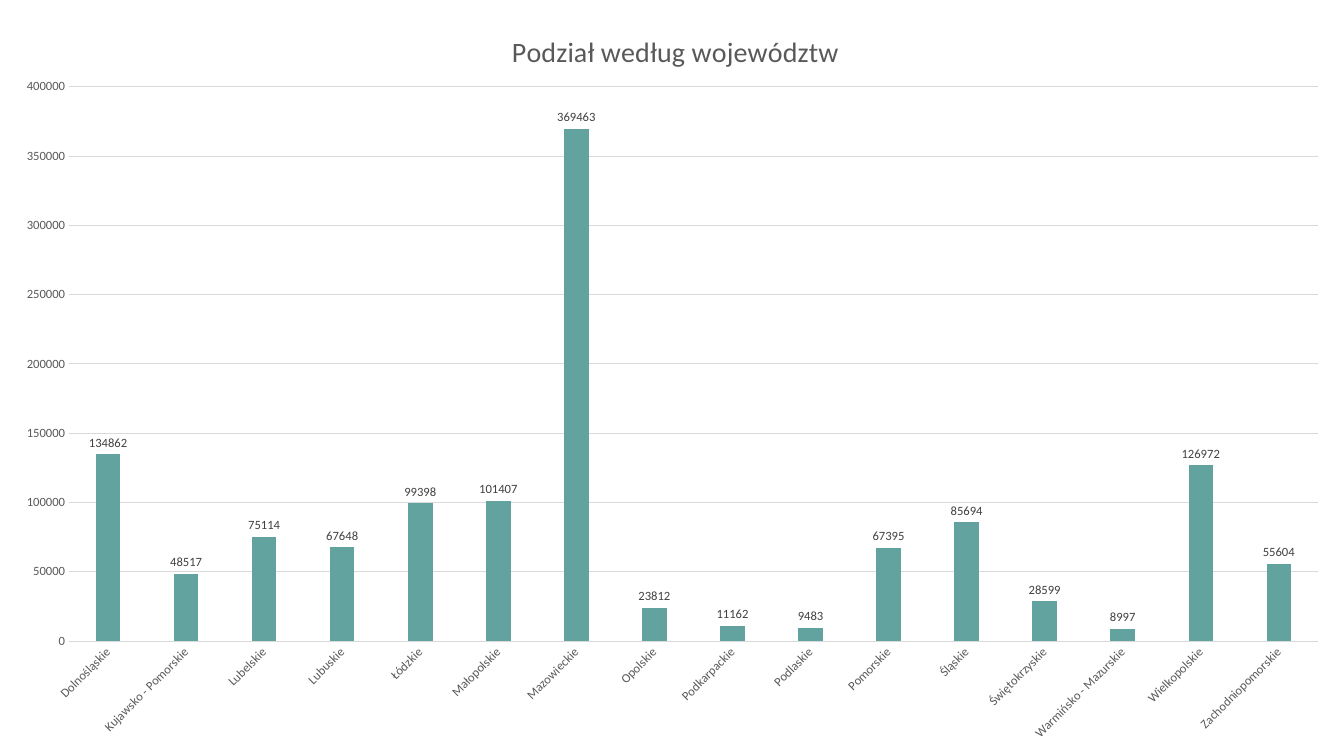
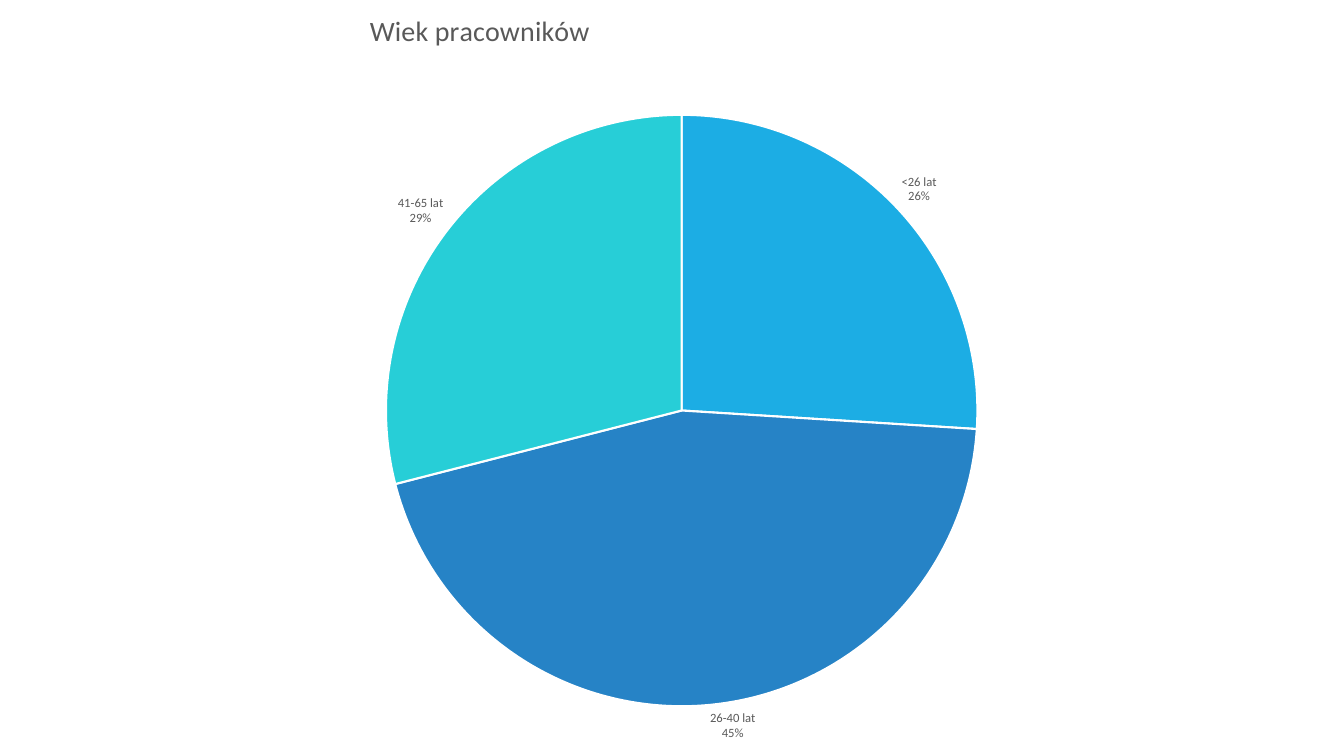
import lxml.etree
import pptx
import pptx.chart.data
import pptx.dml.color
import pptx.enum.chart
import pptx.oxml.ns
import pptx.util

Pt = pptx.util.Pt
RGBColor = pptx.dml.color.RGBColor
qn = pptx.oxml.ns.qn
ChartType = pptx.enum.chart.XL_CHART_TYPE

PAGE_WIDTH, PAGE_HEIGHT = 960, 540
FONT = "Calibri"
WHITE = RGBColor(0xFF, 0xFF, 0xFF)
BLACK = RGBColor(0x00, 0x00, 0x00)
GREY = RGBColor(0x59, 0x59, 0x59)
DARK_GREY = RGBColor(0x40, 0x40, 0x40)
LIGHT_GREY = RGBColor(0xD9, 0xD9, 0xD9)
TEAL = RGBColor(0x62, 0xA3, 0x9F)
AGE_COLOURS = (
    RGBColor(0x1C, 0xAD, 0xE4),
    RGBColor(0x26, 0x83, 0xC6),
    RGBColor(0x27, 0xCE, 0xD7),
    RGBColor(0x42, 0xBA, 0x97),
)

BASE_TEXT = {"name": FONT, "size": Pt(10)}
TITLE_TEXT = {"name": FONT, "size": Pt(20), "bold": False}
SMALL_TEXT = {"name": FONT, "size": Pt(9), "bold": False}

# Title places are (left, top), plot places (left, top, width, height), in points.
REGIONS = {
    "title": "Podział według województw",
    "title_place": (362, 19),
    "plot_place": (49.3, 62, 892, 396),
    "values": {
        "Dolnośląskie": 134862,
        "Kujawsko - Pomorskie": 48517,
        "Lubelskie": 75114,
        "Lubuskie": 67648,
        "Łódzkie": 99398,
        "Małopolskie": 101407,
        "Mazowieckie": 369463,
        "Opolskie": 23812,
        "Podkarpackie": 11162,
        "Podlaskie": 9483,
        "Pomorskie": 67395,
        "Śląskie": 85694,
        "Świętokrzyskie": 28599,
        "Warmińsko - Mazurskie": 8997,
        "Wielkopolskie": 126972,
        "Zachodniopomorskie": 55604,
    },
}
AGES = {
    "title": "Wiek pracowników",
    "title_place": (260.5, 4),
    "plot_place": (275.7, 82, 422.5, 422.5),
    "values": {"<26 lat": 26, "26-40 lat": 45, "41-65 lat": 29, ">65 lat": 0},
}


def set_values(target, values):
    for name, value in values.items():
        setattr(target, name, value)


def style_font(font, values, colour):
    set_values(font, values)
    font.color.rgb = colour


def style_line(line, colour, width):
    line.color.rgb = colour
    line.width = Pt(width)


def place_part(part, position, place, target=None):
    """Give a chart part a fixed place in points, as a layout child at the given position."""
    for old in part.findall(qn("c:layout")):
        part.remove(old)
    layout = lxml.etree.Element(qn("c:layout"))
    manual = lxml.etree.SubElement(layout, qn("c:manualLayout"))
    settings = [("layoutTarget", target)] if target else []
    settings += [("xMode", "edge"), ("yMode", "edge")]
    page_size = (PAGE_WIDTH, PAGE_HEIGHT) * 2
    settings += [(name, str(round(length / whole, 4)))
                 for name, length, whole in zip("xywh", place, page_size)]
    for name, value in settings:
        lxml.etree.SubElement(manual, qn("c:" + name)).set("val", value)
    part.insert(position, layout)


def add_chart_page(deck, chart_type, content):
    """Add a slide filled by one titled chart and return the chart."""
    page = deck.slides.add_slide(deck.slide_layouts[6])
    data = pptx.chart.data.CategoryChartData()
    data.categories = list(content["values"])
    data.add_series("Series 1", list(content["values"].values()))
    chart = page.shapes.add_chart(
        chart_type, 0, 0, Pt(PAGE_WIDTH), Pt(PAGE_HEIGHT), data).chart
    style_font(chart.font, BASE_TEXT, BLACK)
    chart.has_legend = False
    chart.has_title = True
    title = chart.chart_title
    title.text_frame.text = content["title"]
    style_font(title.text_frame.paragraphs[0].runs[0].font, TITLE_TEXT, GREY)
    place_part(title._element, 1, content["title_place"])
    plot_area = chart._chartSpace.find(".//" + qn("c:plotArea"))
    place_part(plot_area, 0, content["plot_place"], "inner")
    return chart


def add_labels(plot, colour, values):
    plot.has_data_labels = True
    labels = plot.data_labels
    style_font(labels.font, SMALL_TEXT, colour)
    labels.position = pptx.enum.chart.XL_LABEL_POSITION.OUTSIDE_END
    set_values(labels, values)
    return labels


def style_axes(chart):
    no_marks = pptx.enum.chart.XL_TICK_MARK.NONE
    for axis in (chart.category_axis, chart.value_axis):
        set_values(axis, {"major_tick_mark": no_marks, "minor_tick_mark": no_marks})
        style_font(axis.tick_labels.font, SMALL_TEXT, GREY)
    style_line(chart.category_axis.format.line, LIGHT_GREY, 0.75)
    label_body = chart.category_axis._element.find(".//" + qn("a:bodyPr"))
    label_body.set("rot", str(-45 * 60000))
    label_body.set("vert", "horz")
    value_axis = chart.value_axis
    set_values(value_axis, {"minimum_scale": 0, "maximum_scale": 400000,
                            "major_unit": 50000, "has_major_gridlines": True})
    value_axis.format.line.fill.background()
    style_line(value_axis.major_gridlines.format.line, LIGHT_GREY, 0.75)


def add_region_page(deck):
    chart = add_chart_page(deck, ChartType.COLUMN_CLUSTERED, REGIONS)
    style_axes(chart)
    plot = chart.plots[0]
    set_values(plot, {"gap_width": 219, "overlap": -27, "vary_by_categories": False})
    fill = plot.series[0].format.fill
    fill.solid()
    fill.fore_color.rgb = TEAL
    add_labels(plot, DARK_GREY, {"show_value": True})


def add_age_page(deck):
    chart = add_chart_page(deck, ChartType.PIE, AGES)
    plot = chart.plots[0]
    plot.vary_by_categories = True
    for index, colour in enumerate(AGE_COLOURS):
        slice_format = plot.series[0].points[index].format
        slice_format.fill.solid()
        slice_format.fill.fore_color.rgb = colour
        style_line(slice_format.line, WHITE, 1.5)
    labels = add_labels(plot, GREY, {
        "show_value": False, "show_percentage": True, "show_category_name": True,
        "number_format": "0%", "number_format_is_linked": False})
    separator = lxml.etree.Element(qn("c:separator"))
    separator.text = "\n"
    labels._element.find(qn("c:showBubbleSize")).addnext(separator)


def main():
    deck = pptx.Presentation()
    set_values(deck, {"slide_width": Pt(PAGE_WIDTH), "slide_height": Pt(PAGE_HEIGHT)})
    add_region_page(deck)
    add_age_page(deck)
    deck.save("out.pptx")


if __name__ == "__main__":
    main()
